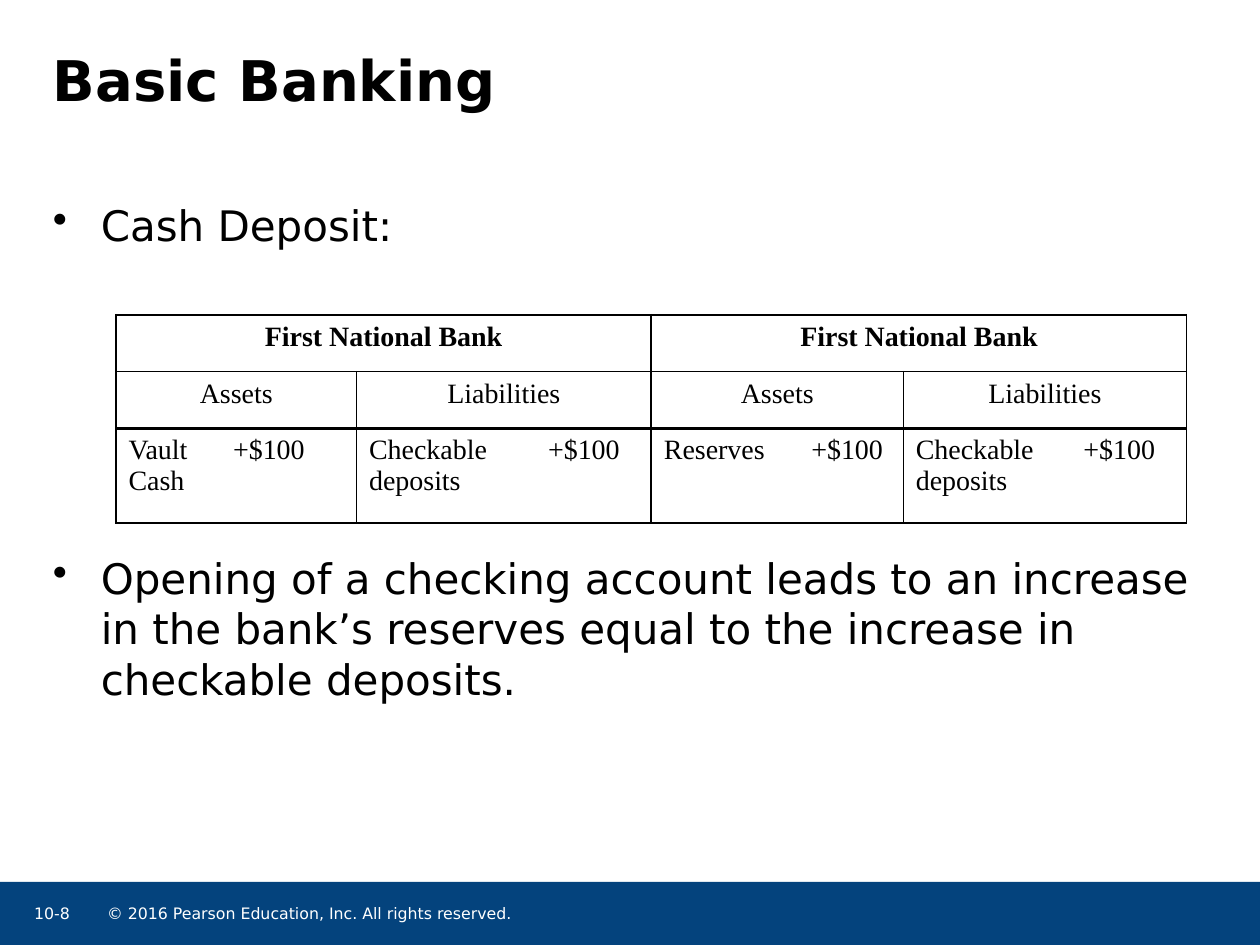
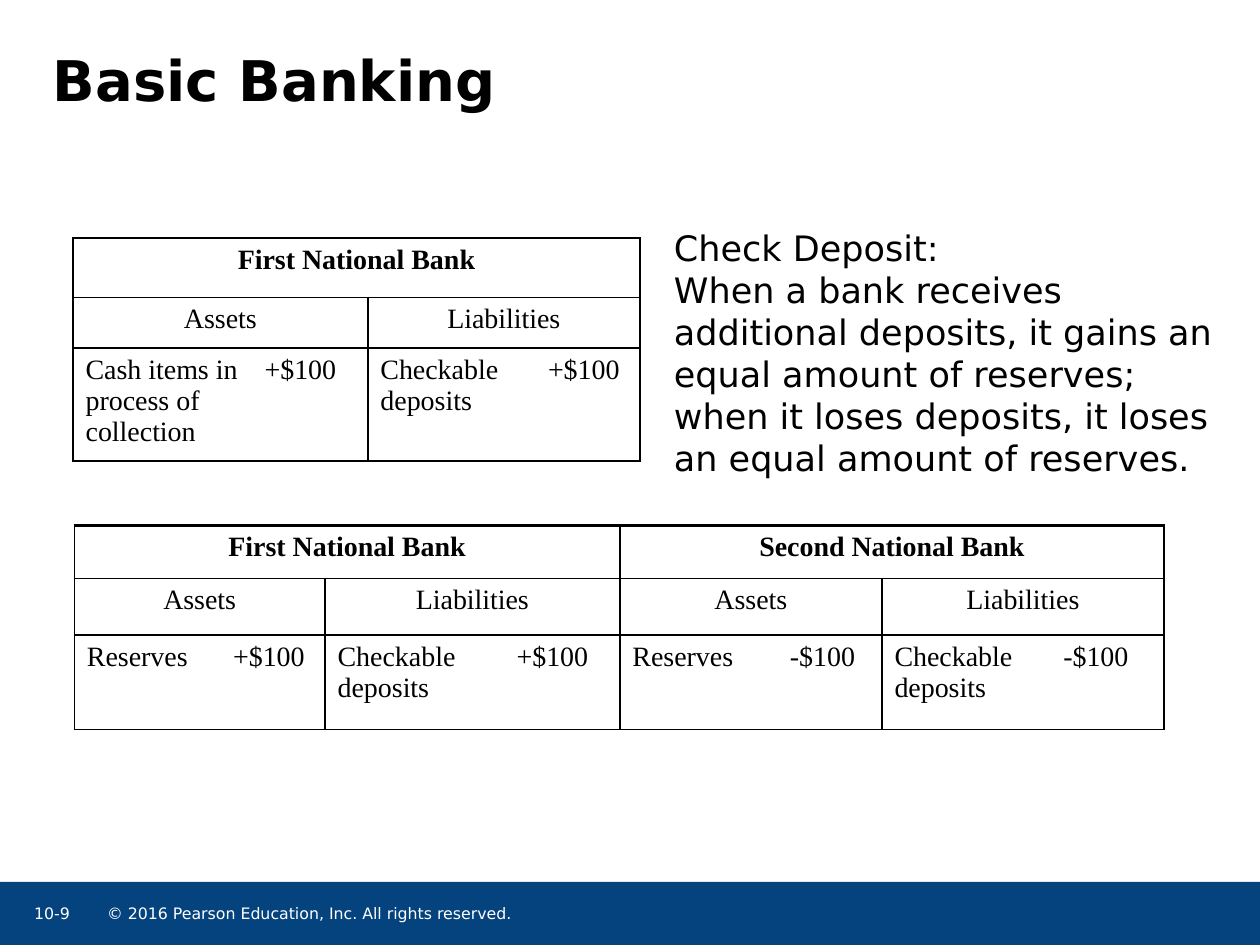
from dataclasses import dataclass

from lxml import etree
from pptx import Presentation
from pptx import util as u
from pptx.dml.color import RGBColor
from pptx.enum import shapes, text
from pptx.oxml import ns

PX = 9144  # one px is a hundredth of an inch


@dataclass(frozen=True)
class Theme:
    black: str = "000000"
    white: str = "FFFFFF"
    band: str = "04437D"
    sans: str = "DejaVu Sans"
    serif: str = "Times New Roman"
    title: int = 32
    bullet: int = 24
    note: int = 20
    table: int = 16
    footer: int = 9
    thin: float = 1
    thick: float = 1.5


THEME = Theme()
COPYRIGHT = "© 2016 Pearson Education, Inc. All rights reserved."


def px(*lengths):
    return [u.Emu(length * PX) for length in lengths]


def format_text(text_frame, size, color=THEME.black, font=THEME.sans, bold=False,
                align=text.PP_ALIGN.LEFT):
    for paragraph in text_frame.paragraphs:
        paragraph.alignment = align
        for run in paragraph.runs:
            run.font.name = font
            run.font.size = u.Pt(size)
            run.font.bold = bold
            run.font.color.rgb = RGBColor.from_string(color)


def set_insets(text_frame, left, top, right, bottom):
    (text_frame.margin_left, text_frame.margin_top,
     text_frame.margin_right, text_frame.margin_bottom) = px(left, top, right, bottom)


def add_text(slide, box, words, size, color=THEME.black, insets=(0, 0, 0, 0)):
    text_frame = slide.shapes.add_textbox(*px(*box)).text_frame
    text_frame.word_wrap = True
    set_insets(text_frame, *insets)
    text_frame.text = words
    format_text(text_frame, size, color)
    return text_frame


def add_bullets(slide, box, items, gap):
    """Add bulleted paragraphs, with gap points between them."""
    text_frame = add_text(slide, box, "\n".join(items), THEME.bullet, insets=(0, 0, 10, 0))
    for index, paragraph in enumerate(text_frame.paragraphs):
        if index:
            paragraph.space_before = u.Pt(gap)
        properties = paragraph._p.get_or_add_pPr()
        properties.set("marL", str(38 * PX))
        properties.set("indent", str(-38 * PX))
        etree.SubElement(properties, ns.qn("a:buChar"), char="•")


def add_footer(slide, number):
    band = slide.shapes.add_shape(shapes.MSO_SHAPE.RECTANGLE, *px(0, 700, 1000, 50))
    band.shadow.inherit = False
    band.fill.solid()
    band.fill.fore_color.rgb = RGBColor.from_string(THEME.band)
    band.line.fill.background()
    add_text(slide, (85, 717, 590, 20), COPYRIGHT, THEME.footer, THEME.white)
    add_text(slide, (27, 717, 39, 20), number, THEME.footer, THEME.white)


def add_titled_slide(presentation, title_words, number):
    slide = presentation.slides.add_slide(presentation.slide_layouts[5])
    add_footer(slide, number)
    title = slide.shapes.title
    title.left, title.top, title.width, title.height = px(42, 0, 917, 125)
    title.text_frame.text = title_words
    title.text_frame.vertical_anchor = text.MSO_ANCHOR.MIDDLE
    set_insets(title.text_frame, 0, 0, 0, 0)
    format_text(title.text_frame, THEME.title, bold=True)
    return slide


def set_borders(cell, **widths):
    """Set the lnL, lnR, lnT and lnB widths in points; None means no line."""
    properties = cell._tc.get_or_add_tcPr()
    for tag, width in widths.items():
        line = etree.SubElement(properties, ns.qn("a:" + tag))
        if width is None:
            etree.SubElement(line, ns.qn("a:noFill"))
        else:
            line.set("w", str(u.Pt(width)))
            fill = etree.SubElement(line, ns.qn("a:solidFill"))
            etree.SubElement(fill, ns.qn("a:srgbClr"), val=THEME.black)


def add_t_accounts(slide, left, top, widths, heights, banks, entries):
    """Add a table of four columns a bank: name, two sides, and label-amount pairs."""
    columns = len(widths)
    table = slide.shapes.add_table(
        3, columns, *px(left, top, sum(widths), sum(heights))).table
    table.first_row = table.horz_banding = False
    for column, width in zip(table.columns, widths):
        column.width = u.Emu(width * PX)
    for row, height in zip(table.rows, heights):
        row.height = u.Emu(height * PX)

    def vertical(line, step):
        if line % step:
            return None
        return THEME.thick if line % 4 == 0 and 0 < line < columns else THEME.thin

    thick_lines = {0, 2} if len(banks) > 1 else {2}
    horizontal = [THEME.thick if line in thick_lines else THEME.thin for line in range(4)]
    row_words = [banks, ["Assets", "Liabilities"] * len(banks), entries]
    for row, (words, span, step) in enumerate(zip(row_words, (4, 2, 1), (4, 2, 2))):
        for column in range(columns):
            cell = table.cell(row, column)
            starts = column % span == 0
            right = column + (span if starts else 1)
            set_borders(cell, lnL=vertical(column, step), lnR=vertical(right, step),
                        lnT=horizontal[row], lnB=horizontal[row + 1])
            cell.fill.background()
            if starts:
                if span > 1:
                    cell.merge(table.cell(row, column + span - 1))
                cell.text_frame.text = words[column // span]
                align = text.PP_ALIGN.CENTER if span > 1 else text.PP_ALIGN.LEFT
                format_text(cell.text_frame, THEME.table, font=THEME.serif,
                            bold=row == 0, align=align)


def build_cash_deposit(presentation):
    slide = add_titled_slide(presentation, "Basic Banking", "10-8")
    add_bullets(slide, (42, 158, 917, 508), [
        "Cash Deposit:",
        "Opening of a checking account leads to an increase in the bank’s reserves "
        "equal to the increase in checkable deposits.",
    ], gap=173)
    add_t_accounts(
        slide, 92, 250, (83, 108, 142, 92, 117, 83, 133, 92), (45, 45, 75),
        ["First National Bank", "First National Bank"],
        ["Vault Cash", "+$100", "Checkable deposits", "+$100",
         "Reserves", "+$100", "Checkable deposits", "+$100"])


def build_check_deposit(presentation):
    slide = add_titled_slide(presentation, "Basic Banking", "10-9")
    add_t_accounts(
        slide, 59, 417, (116, 83, 142, 92, 125, 83, 134, 90), (42, 45, 75),
        ["First National Bank", "Second National Bank"],
        ["Reserves", "+$100", "Checkable deposits", "+$100",
         "Reserves", "-$100", "Checkable deposits", "-$100"])
    add_t_accounts(
        slide, 58, 189, (142, 92, 133, 83), (47, 40, 90), ["First National Bank"],
        ["Cash items in process of collection", "+$100", "Checkable\ndeposits", "+$100"])
    add_text(slide, (525, 175, 458, 212),
             "Check Deposit:\nWhen a bank receives additional deposits, it gains an equal "
             "amount of reserves; when it loses deposits, it loses an equal amount of "
             "reserves.", THEME.note, insets=(10, 5, 10, 5))


def main():
    presentation = Presentation()
    presentation.slide_width, presentation.slide_height = px(1000, 750)
    build_cash_deposit(presentation)
    build_check_deposit(presentation)
    presentation.save("out.pptx")


if __name__ == "__main__":
    main()
